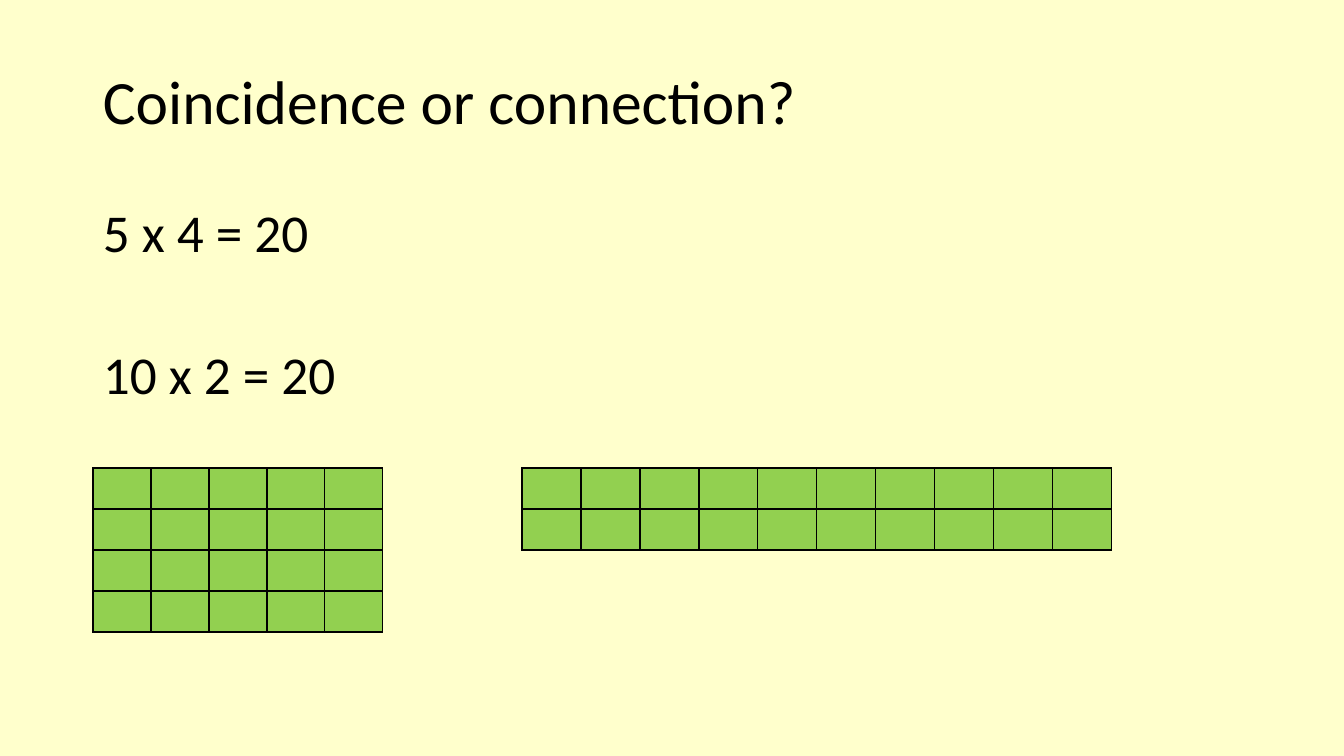
from lxml import etree
from pptx import Presentation
from pptx.dml.color import RGBColor
from pptx.enum.text import MSO_ANCHOR
from pptx.oxml.ns import qn
from pptx.util import Emu, Pt

MIDDLE, TOP = MSO_ANCHOR.MIDDLE, MSO_ANCHOR.TOP
EMU_PER_PX = 914400 / 100.8
BLANK_LAYOUT = 6
CELL_SIDES = ("a:lnL", "a:lnR", "a:lnT", "a:lnB")


def px(length):
    return Emu(round(length * EMU_PER_PX))


def colour(hex_string):
    return RGBColor.from_string(hex_string)


class SlideBuilder:
    font_name = "Calibri"
    ink = "000000"
    paper = "FFFFCC"
    tile = "92D050"

    def __init__(self, deck):
        self.page = deck.slides.add_slide(deck.slide_layouts[BLANK_LAYOUT])
        fill = self.page.background.fill
        fill.solid()
        fill.fore_color.rgb = colour(self.paper)

    def text(self, left, top, width, height, lines, size, anchor=TOP, gap=0):
        """Add a text box with one paragraph a line and a gap in points between them."""
        box = self.page.shapes.add_textbox(px(left), px(top), px(width), px(height))
        frame = box.text_frame
        frame.word_wrap = True
        frame.vertical_anchor = anchor
        for index, line in enumerate(lines):
            para = frame.paragraphs[0] if index == 0 else frame.add_paragraph()
            spacing = {"line_spacing": 0.9, "space_before": Pt(gap if index else 0)}
            for name, value in spacing.items():
                setattr(para, name, value)
            span = para.add_run()
            span.text = line
            for name, value in {"name": self.font_name, "size": Pt(size)}.items():
                setattr(span.font, name, value)
            span.font.color.rgb = colour(self.ink)

    def array(self, left, top, columns, rows, cell_width, cell_height):
        """Add a table of equal empty cells."""
        frame = self.page.shapes.add_table(
            rows, columns, px(left), px(top),
            px(columns * cell_width), px(rows * cell_height))
        table = frame.table
        for name, value in {"first_row": False, "horz_banding": False}.items():
            setattr(table, name, value)
        for column in table.columns:
            column.width = px(cell_width)
        for row in table.rows:
            row.height = px(cell_height)
        for cell in table.iter_cells():
            cell.fill.solid()
            cell.fill.fore_color.rgb = colour(self.tile)
            self.border(cell)

    def border(self, cell):
        """Outline a cell; its lines must come before its fill."""
        properties = cell._tc.get_or_add_tcPr()
        for index, side in enumerate(CELL_SIDES):
            line = etree.Element(qn(side), w=str(Pt(1)))
            fill = etree.SubElement(line, qn("a:solidFill"))
            etree.SubElement(fill, qn("a:srgbClr"), val=self.ink)
            properties.insert(index, line)


def main():
    deck = Presentation()
    deck.slide_width, deck.slide_height = px(1344), px(756)
    slide = SlideBuilder(deck)

    # Title and the two products
    slide.text(93, 42, 907, 126, ["Coincidence or connection?"], 44, anchor=MIDDLE)
    slide.text(93, 202, 1159, 480, ["5 x 4 = 20", "10 x 2 = 20"], 38, gap=60)

    # Arrays that show each product
    slide.array(93, 468, columns=5, rows=4, cell_width=58, cell_height=41)
    slide.array(522, 468, columns=10, rows=2, cell_width=59, cell_height=41)

    deck.save("out.pptx")


if __name__ == "__main__":
    main()
